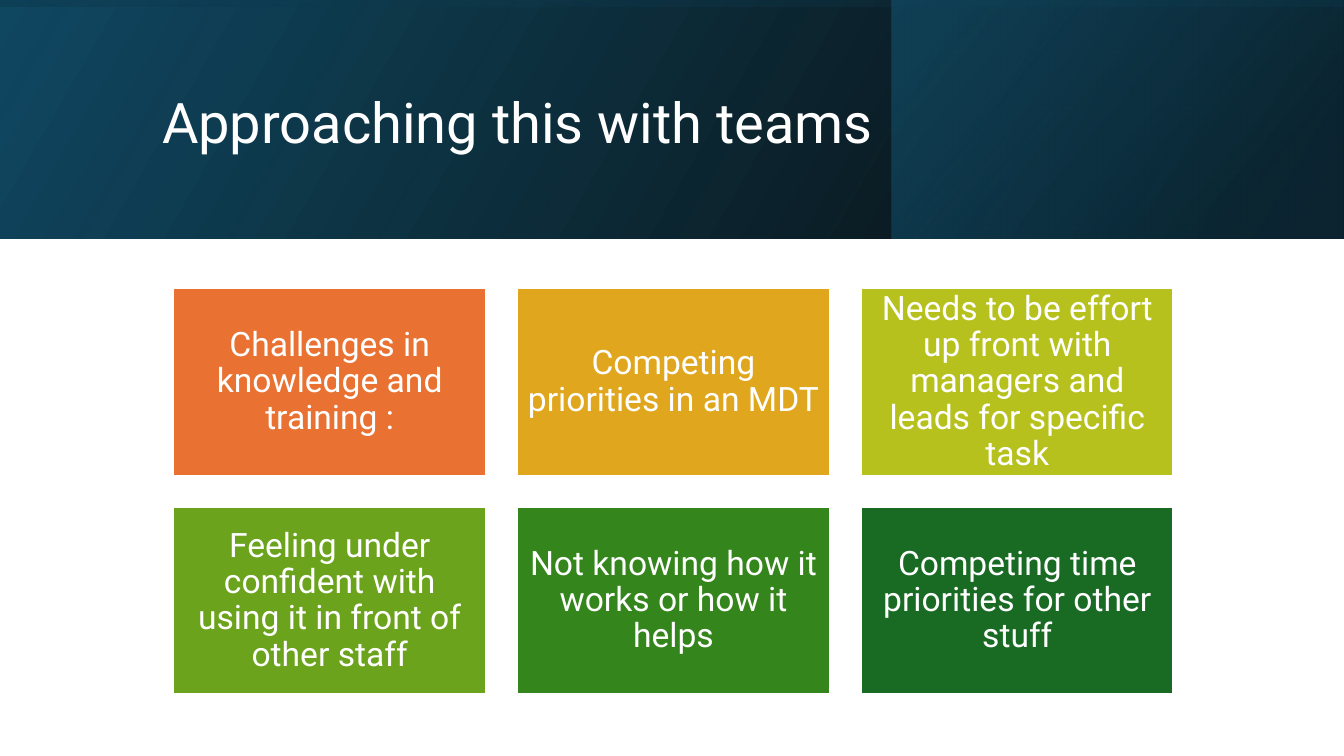
from pptx import Presentation
from pptx import util as u
from pptx.dml.color import RGBColor
from pptx.enum import shapes, text
from pptx.oxml.ns import qn
from lxml import etree


def color(value):
    return RGBColor.from_string(value)


def write_text(shape, words, size, align, vertical_inset):
    frame = shape.text_frame
    frame_format = {
        "word_wrap": True,
        "vertical_anchor": text.MSO_ANCHOR.MIDDLE,
        "margin_left": u.Inches(0.1),
        "margin_right": u.Inches(0.1),
        "margin_top": u.Inches(vertical_inset),
        "margin_bottom": u.Inches(vertical_inset),
    }
    for name, value in frame_format.items():
        setattr(frame, name, value)
    paragraph = frame.paragraphs[0]
    paragraph.alignment = align
    paragraph.line_spacing = 0.9
    run = paragraph.add_run()
    run.text = words
    for name, value in {"name": "Roboto", "size": u.Pt(size)}.items():
        setattr(run.font, name, value)
    run.font.color.rgb = color("FFFFFF")


presentation = Presentation()
presentation.slide_width = u.Inches(13.33)
presentation.slide_height = u.Inches(7.5)
slide = presentation.slides.add_slide(presentation.slide_layouts[6])

# Header band: box, rotation, counter-clockwise angle, stops (percent, color, opacity)
header_layers = [
    ((0, 0, 13.33, 2.37), 0, 30, [(0, "000000", 96), (100, "104862", 100)]),
    ((8.84, 0, 4.48, 2.37), 0, 40, [(19, "0B3041", 68), (100, "156082", 48)]),
    ((5.48, -5.48, 2.37, 13.33), 270, 10, [(23, "104862", 16), (99, "000000", 45)]),
]
# The first layer's blue stop is opaque
for box, rotation, angle, stops in header_layers:
    layer = slide.shapes.add_shape(shapes.MSO_SHAPE.RECTANGLE, *map(u.Inches, box))
    layer.shadow.inherit = False
    layer.rotation = rotation
    layer._element.spPr.xfrm.set("flipH", "1")
    layer.line.fill.background()
    layer.fill.gradient()
    layer.fill.gradient_angle = angle
    for stop, (position, value, _) in zip(layer.fill.gradient_stops, stops):
        stop.position = position / 100
        stop.color.rgb = color(value)
    stop_colors = layer._element.spPr.iter(qn("a:srgbClr"))
    for element, (_, _, opacity) in zip(list(stop_colors), stops):
        etree.SubElement(element, qn("a:alpha")).set("val", str(opacity * 1000))

# Title
title = slide.shapes.add_textbox(*map(u.Inches, (1.51, 0.38, 10.63, 1.72)))
write_text(title, "Approaching this with teams", 40, text.PP_ALIGN.LEFT, 0.05)

# Grid of challenge cards, three to a row
cards = [
    ("Challenges in knowledge and training :", "E97132"),
    ("Competing priorities in an MDT", "E0A61D"),
    ("Needs to be effort up front with managers and leads for specific task", "B7C11E"),
    ("Feeling under confident with using it in front of other staff", "6BA31D"),
    ("Not knowing how it works or how it helps", "34861C"),
    ("Competing time priorities for other stuff", "196B24"),
]
for index, (words, fill) in enumerate(cards):
    row, column = divmod(index, 3)
    box = (1.72 + 3.41 * column, 2.86 + 2.17 * row, 3.1, 1.86)
    card = slide.shapes.add_shape(shapes.MSO_SHAPE.RECTANGLE, *map(u.Inches, box))
    card.shadow.inherit = False
    card.fill.solid()
    card.fill.fore_color.rgb = color(fill)
    card.line.color.rgb = color("FFFFFF")
    card.line.width = u.Pt(1.5)
    write_text(card, words, 24, text.PP_ALIGN.CENTER, 0.1)

presentation.save("out.pptx")
